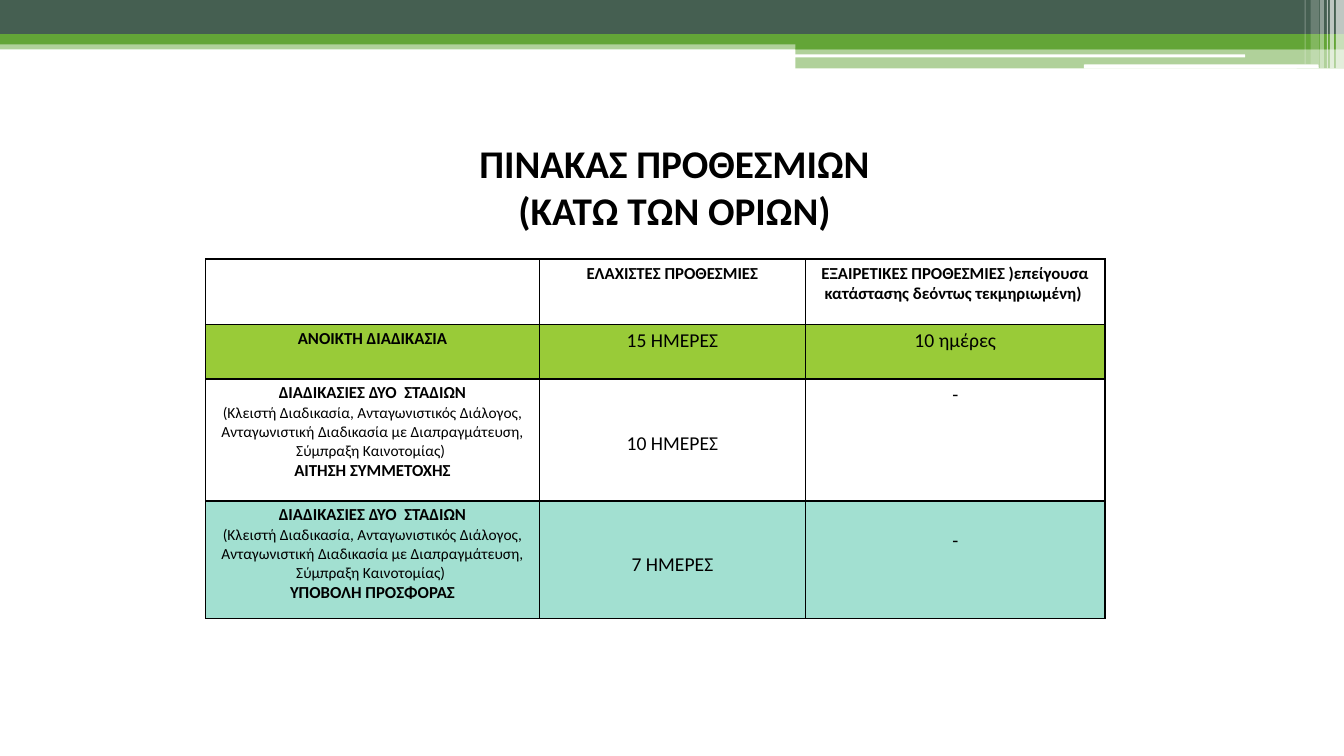
import pptx
import pptx.util
import pptx.dml.color
import pptx.enum.shapes
import pptx.enum.text
import pptx.oxml
import pptx.oxml.ns
from pptx.util import Inches

GREEN = "63A537"
DARK_GREEN = "455F51"
WHITE = "FFFFFF"
BLACK = "000000"
FONT = "Calibri"
LINE_HEIGHT = 0.24

BANDS = [
    (0, 0.4, 13.33, 0.09, GREEN, 50),
    (0, 0, 13.33, 0.34, DARK_GREEN, 100),
    (0, 0.34, 13.33, 0.1, GREEN, 100),
    (7.89, 0.39, 5.44, 0.1, GREEN, 100),
    (7.89, 0.48, 5.44, 0.2, GREEN, 50),
]
SLITS = [(7.88, 0.54, 4.47, 0.03), (10.75, 0.64, 2.33, 0.04)]
STRIPES = [
    (13.25, 0.08, 0.68, 65),
    (13.19, 0.04, 0.68, 65),
    (13.16, 0.01, 0.68, 60),
    (13.09, 0.04, 0.68, 40),
    (13, 0.08, 0.64, 20),
    (12.94, 0.01, 0.64, 30),
]

COLUMN_WIDTHS = [3.31, 2.64, 2.97]
ROW_HEIGHTS = [0.65, 0.54, 1.21, 1.17]
ROW_FILLS = [None, "99CB38", None, "A2E0D1"]


def heading(text):
    return text, 12, True


def days(text):
    return text, 14, False


def two_stages(step):
    procedures = (
        "(Κλειστή Διαδικασία, Ανταγωνιστικός Διάλογος, Ανταγωνιστική "
        "Διαδικασία με Διαπραγμάτευση, Σύμπραξη Καινοτομίας) "
    )
    return [heading("ΔΙΑΔΙΚΑΣΙΕΣ ΔΥΟ  ΣΤΑΔΙΩΝ"), (procedures, 11, False), heading(step)]


DEADLINES = [
    [
        ([], 0),
        ([heading("ΕΛΑΧΙΣΤΕΣ ΠΡΟΘΕΣΜΙΕΣ")], 0),
        ([heading("ΕΞΑΙΡΕΤΙΚΕΣ ΠΡΟΘΕΣΜΙΕΣ )επείγουσα κατάστασης δεόντως τεκμηριωμένη) ")], 0),
    ],
    [
        ([heading("ΑΝΟΙΚΤΗ ΔΙΑΔΙΚΑΣΙΑ")], 0),
        ([days("15 ΗΜΕΡΕΣ")], 0),
        ([days("10 ημέρες")], 0),
    ],
    [
        (two_stages("ΑΙΤΗΣΗ ΣΥΜΜΕΤΟΧΗΣ"), 0),
        ([days("10 ΗΜΕΡΕΣ")], 2),
        ([days("-")], 0),
    ],
    [
        (two_stages("ΥΠΟΒΟΛΗ ΠΡΟΣΦΟΡΑΣ"), 0),
        ([days("7 ΗΜΕΡΕΣ")], 2),
        ([days("-")], 1),
    ],
]


def rgb(color):
    return pptx.dml.color.RGBColor.from_string(color)


def set_fill(fill, color, opacity=100):
    fill.solid()
    fill.fore_color.rgb = rgb(color)
    if opacity < 100:
        color_element = fill._xPr.find(".//" + pptx.oxml.ns.qn("a:srgbClr"))
        alpha = pptx.oxml.parse_xml(
            f'<a:alpha {pptx.oxml.ns.nsdecls("a")} val="{opacity * 1000}"/>'
        )
        color_element.append(alpha)


def add_bar(slide, left, top, width, height, color, opacity=100, rounded=False):
    kinds = pptx.enum.shapes.MSO_SHAPE
    kind = kinds.ROUNDED_RECTANGLE if rounded else kinds.RECTANGLE
    bar = slide.shapes.add_shape(
        kind, Inches(left), Inches(top), Inches(width), Inches(height)
    )
    bar.shadow.inherit = False
    bar.line.fill.background()
    set_fill(bar.fill, color, opacity)


def style_paragraph(paragraph, text, size, bold):
    paragraph.text = text
    paragraph.alignment = pptx.enum.text.PP_ALIGN.CENTER
    paragraph.font.name = FONT
    paragraph.font.size = pptx.util.Pt(size)
    paragraph.font.bold = bold
    paragraph.font.color.rgb = rgb(BLACK)


def add_title(slide, text):
    title = slide.shapes.add_textbox(Inches(2.19), Inches(1.41), Inches(9), Inches(0.88))
    title.text_frame.word_wrap = True
    title.text_frame.vertical_anchor = pptx.enum.text.MSO_ANCHOR.MIDDLE
    style_paragraph(title.text_frame.paragraphs[0], text, 28, True)


def add_borders(cell):
    properties = cell._tc.get_or_add_tcPr()
    for side in "LRTB":
        properties.append(pptx.oxml.parse_xml(
            f'<a:ln{side} {pptx.oxml.ns.nsdecls("a")} w="{pptx.util.Pt(1)}">'
            f'<a:solidFill><a:srgbClr val="{BLACK}"/></a:solidFill></a:ln{side}>'
        ))


def fill_cell(cell, paragraphs, lines_down, color):
    add_borders(cell)
    if color:
        set_fill(cell.fill, color, 20)
    else:
        cell.fill.background()
    cell.margin_left = cell.margin_right = Inches(0.07)
    cell.margin_top = Inches(0.04 + lines_down * LINE_HEIGHT)
    cell.margin_bottom = Inches(0.04)
    frame = cell.text_frame
    for index, content in enumerate(paragraphs):
        paragraph = frame.add_paragraph() if index else frame.paragraphs[0]
        style_paragraph(paragraph, *content)


def add_deadline_table(slide):
    table = slide.shapes.add_table(
        len(ROW_HEIGHTS), len(COLUMN_WIDTHS), Inches(2.04), Inches(2.57),
        Inches(sum(COLUMN_WIDTHS)), Inches(sum(ROW_HEIGHTS)),
    ).table
    table.first_row = False
    table.horz_banding = False
    for column, width in zip(table.columns, COLUMN_WIDTHS):
        column.width = Inches(width)
    for row, height, color, deadlines in zip(table.rows, ROW_HEIGHTS, ROW_FILLS, DEADLINES):
        row.height = Inches(height)
        for cell, (paragraphs, lines_down) in zip(row.cells, deadlines):
            fill_cell(cell, paragraphs, lines_down, color)


def main():
    deck = pptx.Presentation()
    deck.slide_width = Inches(13.33)
    deck.slide_height = Inches(7.5)
    slide = deck.slides.add_slide(deck.slide_layouts[6])
    for band in BANDS:
        add_bar(slide, *band)
    for slit in SLITS:
        add_bar(slide, *slit, WHITE, rounded=True)
    for left, width, height, opacity in STRIPES:
        add_bar(slide, left, 0, width, height, WHITE, opacity)
    add_title(slide, "ΠΙΝΑΚΑΣ ΠΡΟΘΕΣΜΙΩΝ\v(ΚΑΤΩ ΤΩΝ ΟΡΙΩΝ)")
    add_deadline_table(slide)
    deck.save("out.pptx")


if __name__ == "__main__":
    main()
